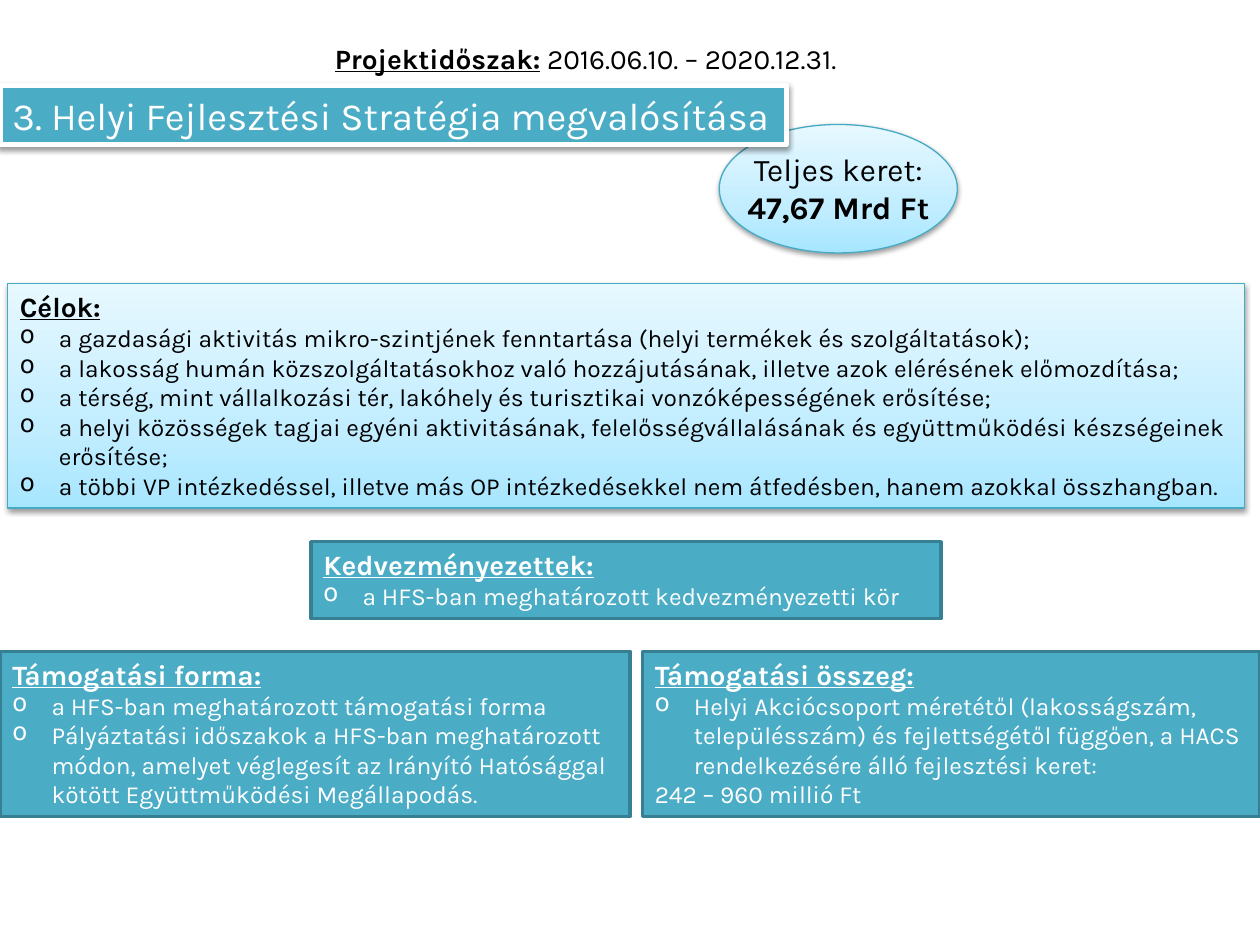
from lxml import etree
from pptx import Presentation
from pptx.dml.color import RGBColor
from pptx.enum.shapes import MSO_SHAPE
from pptx.enum.text import MSO_ANCHOR, MSO_AUTO_SIZE, PP_ALIGN
from pptx.oxml.ns import qn
from pptx.util import Cm, Pt

RECT, OVAL = MSO_SHAPE.RECTANGLE, MSO_SHAPE.OVAL
LEFT, CENTER = PP_ALIGN.LEFT, PP_ALIGN.CENTER
TOP = MSO_ANCHOR.TOP
FIT = MSO_AUTO_SIZE.SHAPE_TO_FIT_TEXT

FONT = "Karla"
TEAL, TEAL_DARK, TEAL_EDGE = "4BACC6", "377F92", "46AAC5"
WHITE, BLACK = "FFFFFF", "000000"
LIGHT_STOPS = [(0, "A7E6FF"), (35, "C1EDFF"), (100, "E7F8FF")]

# Content; a list item starting with "* " is bulleted
TITLE = "3. Helyi Fejlesztési Stratégia megvalósítása"
PERIOD = ("Projektidőszak:", " 2016.06.10. – 2020.12.31.")
BUDGET = ("Teljes keret:", "47,67 Mrd Ft")
GOALS = ("Célok:", [
    "* a gazdasági aktivitás mikro-szintjének fenntartása (helyi termékek és szolgáltatások);",
    "* a lakosság humán közszolgáltatásokhoz való hozzájutásának, illetve azok elérésének előmozdítása;",
    "* a térség, mint vállalkozási tér, lakóhely és turisztikai vonzóképességének erősítése;",
    "* a helyi közösségek tagjai egyéni aktivitásának, felelősségvállalásának és "
    "együttműködési készségeinek erősítése;",
    "* a többi VP intézkedéssel, illetve más OP intézkedésekkel nem átfedésben, "
    "hanem azokkal összhangban.",
])
# Left, top, width, height in cm, then heading and items
PANELS = [
    ((6.27, 10.92, 12.7, 1.55), "Kedvezményezettek:",
     ["* a HFS-ban meghatározott kedvezményezetti kör"]),
    ((0, 13.13, 12.7, 3.33), "Támogatási forma:", [
        "* a HFS-ban meghatározott támogatási forma",
        "* Pályáztatási időszakok a HFS-ban meghatározott módon, amelyet véglegesít "
        "az Irányító Hatósággal kötött Együttműködési Megállapodás.",
    ]),
    ((12.95, 13.13, 12.45, 3.33), "Támogatási összeg:", [
        "* Helyi Akciócsoport méretétől (lakosságszám, településszám) és "
        "fejlettségétől függően, a HACS rendelkezésére álló fejlesztési keret:",
        "242 – 960 millió Ft",
    ]),
]


def rgb(color):
    return RGBColor.from_string(color)


def add_child(parent, tag, **attrs):
    return etree.SubElement(parent, qn(tag), {k: str(v) for k, v in attrs.items()})


def add_color(parent, color):
    return add_child(parent, "a:srgbClr", val=color)


def fill_light(sp):
    sp.fill.gradient()
    sp.fill.gradient_angle = 90
    stops = sp._element.spPr.find(".//" + qn("a:gsLst"))
    for stop in list(stops):
        stops.remove(stop)
    for pos, color in LIGHT_STOPS:
        add_color(add_child(stops, "a:gs", pos=pos * 1000), color)


def add_shadow(sp):
    effects = sp._element.spPr.find(qn("a:effectLst"))
    shadow = add_child(effects, "a:outerShdw", blurRad=Pt(3.15), dist=Pt(1.57),
                       dir=5400000, rotWithShape=0)
    add_child(add_color(shadow, BLACK), "a:alpha", val=38000)


def add_panel(kind, box, line, width, fill=None, shadow=False):
    sp = s.shapes.add_shape(kind, *map(Cm, box))
    sp.shadow.inherit = False
    if fill:
        sp.fill.solid()
        sp.fill.fore_color.rgb = rgb(fill)
    else:
        fill_light(sp)
    sp.line.color.rgb = rgb(line)
    sp.line.width = Pt(width)
    if shadow:
        add_shadow(sp)
    return sp


def frame(sp, wrap=True):
    tf = sp.text_frame
    tf.word_wrap = wrap
    tf.auto_size = FIT
    tf.vertical_anchor = TOP
    return tf


def add_paragraph(tf, first=False, align=LEFT, bullet=False):
    p = tf.paragraphs[0] if first else tf.add_paragraph()
    p.alignment = align
    if bullet:
        pPr = p._p.get_or_add_pPr()
        pPr.set("marL", str(Cm(0.79)))
        pPr.set("indent", str(-Cm(0.79)))
        add_child(pPr, "a:buChar", char="o")
    return p


def add_text(p, text, size=14, color=BLACK, bold=False, underline=False):
    r = p.add_run()
    r.text = text
    r.font.name = FONT
    r.font.size = Pt(size)
    r.font.color.rgb = rgb(color)
    r.font.bold = bold
    r.font.underline = underline


def write_section(sp, heading, items, color):
    tf = frame(sp)
    add_text(add_paragraph(tf, first=True), heading, size=16, color=color,
             bold=True, underline=True)
    for item in items:
        p = add_paragraph(tf, bullet=item.startswith("* "))
        add_text(p, item.removeprefix("* "), color=color)


prs = Presentation()
prs.slide_width, prs.slide_height = Cm(25.4), Cm(19.05)
s = prs.slides.add_slide(prs.slide_layouts[6])

# Budget ellipse, partly under the title bar
add_panel(OVAL, (14.5, 2.51, 4.8, 2.59), TEAL_EDGE, 0.75, shadow=True)

# Title bar
title = add_panel(RECT, (0, 1.73, 15.85, 1.19), WHITE, 3, fill=TEAL, shadow=True)
add_text(add_paragraph(frame(title), first=True), TITLE, size=22, color=WHITE)

# Budget text
tf = frame(s.shapes.add_textbox(Cm(14.78), Cm(2.9), Cm(4.24), Cm(1.8)), wrap=False)
for i, text in enumerate(BUDGET):
    add_text(add_paragraph(tf, first=i == 0, align=CENTER), text, size=18, bold=i == 1)

# Project period
tf = frame(s.shapes.add_textbox(Cm(6.5), Cm(0.71), Cm(11.71), Cm(0.94)), wrap=False)
p = add_paragraph(tf, first=True)
label, dates = PERIOD
add_text(p, label, size=16, bold=True, underline=True)
add_text(p, dates, size=16)

# Beneficiaries and support panels
for box, heading, items in PANELS:
    sp = add_panel(RECT, box, TEAL_DARK, 2, fill=TEAL)
    write_section(sp, heading, items, WHITE)

# Goals
goals = add_panel(RECT, (0.15, 5.72, 24.94, 4.52), TEAL_EDGE, 0.75, shadow=True)
write_section(goals, *GOALS, BLACK)

prs.save("out.pptx")
